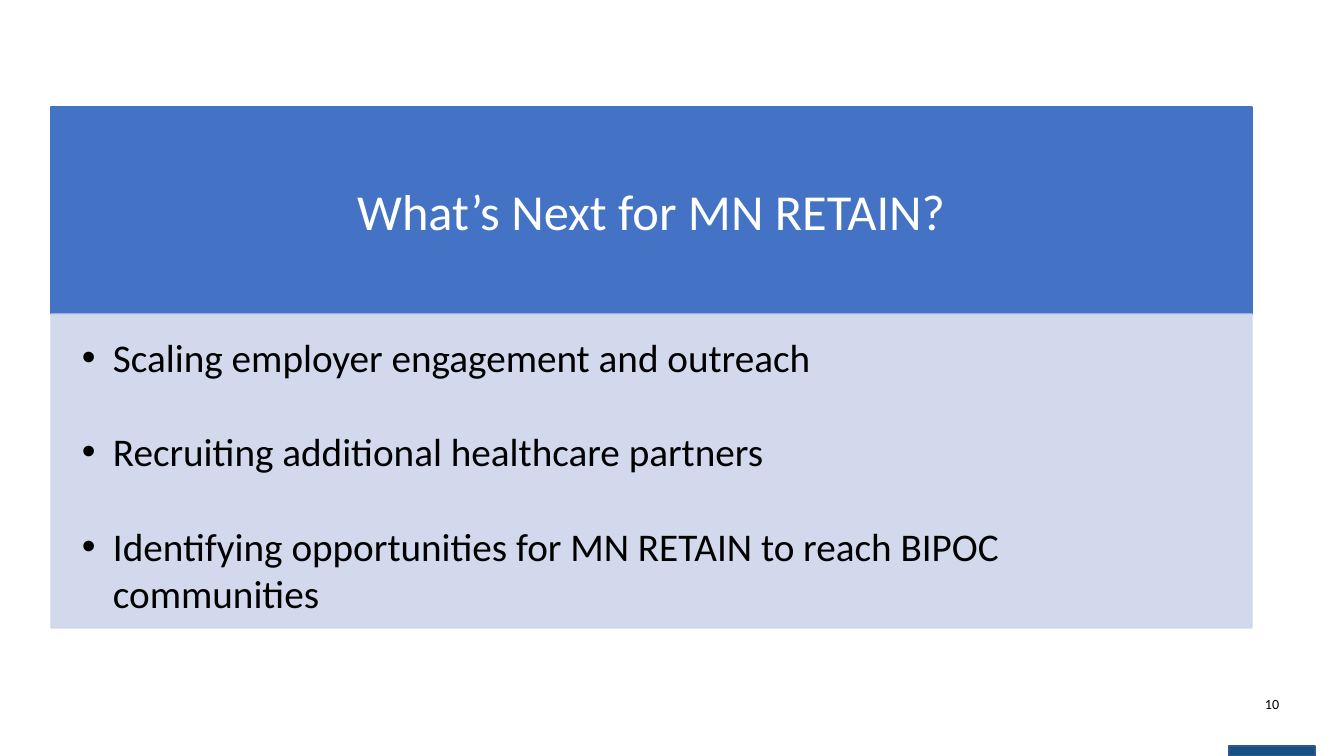
from lxml import etree
from pptx import Presentation
from pptx.dml.color import RGBColor
from pptx.enum.shapes import MSO_SHAPE
from pptx.enum.text import MSO_ANCHOR, PP_ALIGN
from pptx.oxml.ns import qn
from pptx.util import Pt

RECTANGLE = MSO_SHAPE.RECTANGLE
TOP, MIDDLE = MSO_ANCHOR.TOP, MSO_ANCHOR.MIDDLE
LEFT, CENTER = PP_ALIGN.LEFT, PP_ALIGN.CENTER

WHITE = RGBColor(0xFF, 0xFF, 0xFF)
BLACK = RGBColor(0x00, 0x00, 0x00)
BLUE = RGBColor(0x44, 0x72, 0xC4)
PALE_BLUE = RGBColor(0xCF, 0xD5, 0xEA)
FOOTER_BLUE = RGBColor(0x13, 0x52, 0x80)
FOOTER_LINE = RGBColor(0x32, 0x54, 0x91)

NEXT_STEPS = [
    "Scaling employer engagement and outreach",
    "Recruiting additional healthcare partners",
    "Identifying opportunities for MN RETAIN to reach BIPOC communities",
]


def px(length):
    """Turn px into EMU at 100.8 px to the inch."""
    return round(length * 914400 / 100.8)


class SlideBuilder:
    """Hold the text style and the current slide."""

    font_name = "Calibri"

    def __init__(self, slide):
        """Start drawing on the given slide."""
        self.slide = slide

    def panel(self, left, top, width, height, fill, line, opacity=100):
        """Add a filled rectangle with a thin outline."""
        shape = self.slide.shapes.add_shape(RECTANGLE, px(left), px(top), px(width), px(height))
        shape.shadow.inherit = False
        shape.fill.solid()
        shape.fill.fore_color.rgb = fill
        shape.line.color.rgb = line
        shape.line.width = Pt(1)
        if opacity < 100:
            for color in shape._element.spPr.iter(qn("a:srgbClr")):
                etree.SubElement(color, qn("a:alpha"), val=str(opacity * 1000))
        return shape

    def text_box(self, left, top, width, height):
        """Add an empty text box."""
        return self.slide.shapes.add_textbox(px(left), px(top), px(width), px(height))

    def add_text(self, shape, lines, size, color, align=LEFT, anchor=TOP,
                 insets=(10, 5, 10, 5), gap=0, indent=0):
        """Put paragraphs into a shape, bulleted when an indent is given."""
        frame = shape.text_frame
        frame.word_wrap = True
        frame.vertical_anchor = anchor
        frame.margin_left, frame.margin_top, frame.margin_right, frame.margin_bottom = map(px, insets)
        for index, line in enumerate(lines):
            paragraph = frame.add_paragraph() if index else frame.paragraphs[0]
            paragraph.text = line
            paragraph.alignment = align
            if index:
                paragraph.space_before = Pt(gap)
            if indent:
                self.bullet(paragraph, indent)
            paragraph.font.name = self.font_name
            paragraph.font.size = Pt(size)
            paragraph.font.color.rgb = color

    def bullet(self, paragraph, indent):
        """Give a paragraph a hanging round bullet."""
        properties = paragraph._p.get_or_add_pPr()
        properties.set("marL", str(px(indent)))
        properties.set("indent", str(-px(indent)))
        etree.SubElement(properties, qn("a:buFont"), typeface="Arial")
        etree.SubElement(properties, qn("a:buChar"), char="•")


def main():
    """Build and save the slide."""
    presentation = Presentation()
    presentation.slide_width, presentation.slide_height = px(1344), px(756)
    builder = SlideBuilder(presentation.slides.add_slide(presentation.slide_layouts[6]))

    builder.panel(1229, 746, 86, 10, FOOTER_BLUE, FOOTER_LINE)

    header = builder.panel(51, 107, 1201, 207, BLUE, BLUE)
    builder.add_text(header, ["What’s Next for MN RETAIN?"], 36, WHITE, CENTER, MIDDLE,
                     insets=(28, 16, 28, 16))

    body = builder.panel(51, 314, 1201, 314, PALE_BLUE, PALE_BLUE, opacity=90)
    builder.add_text(body, NEXT_STEPS, 28, BLACK, insets=(31, 19, 51, 0), gap=34, indent=31)

    page_number = builder.text_box(1229, 691, 86, 27)
    builder.add_text(page_number, ["10"], 10, BLACK, CENTER)

    presentation.save("out.pptx")


if __name__ == "__main__":
    main()
